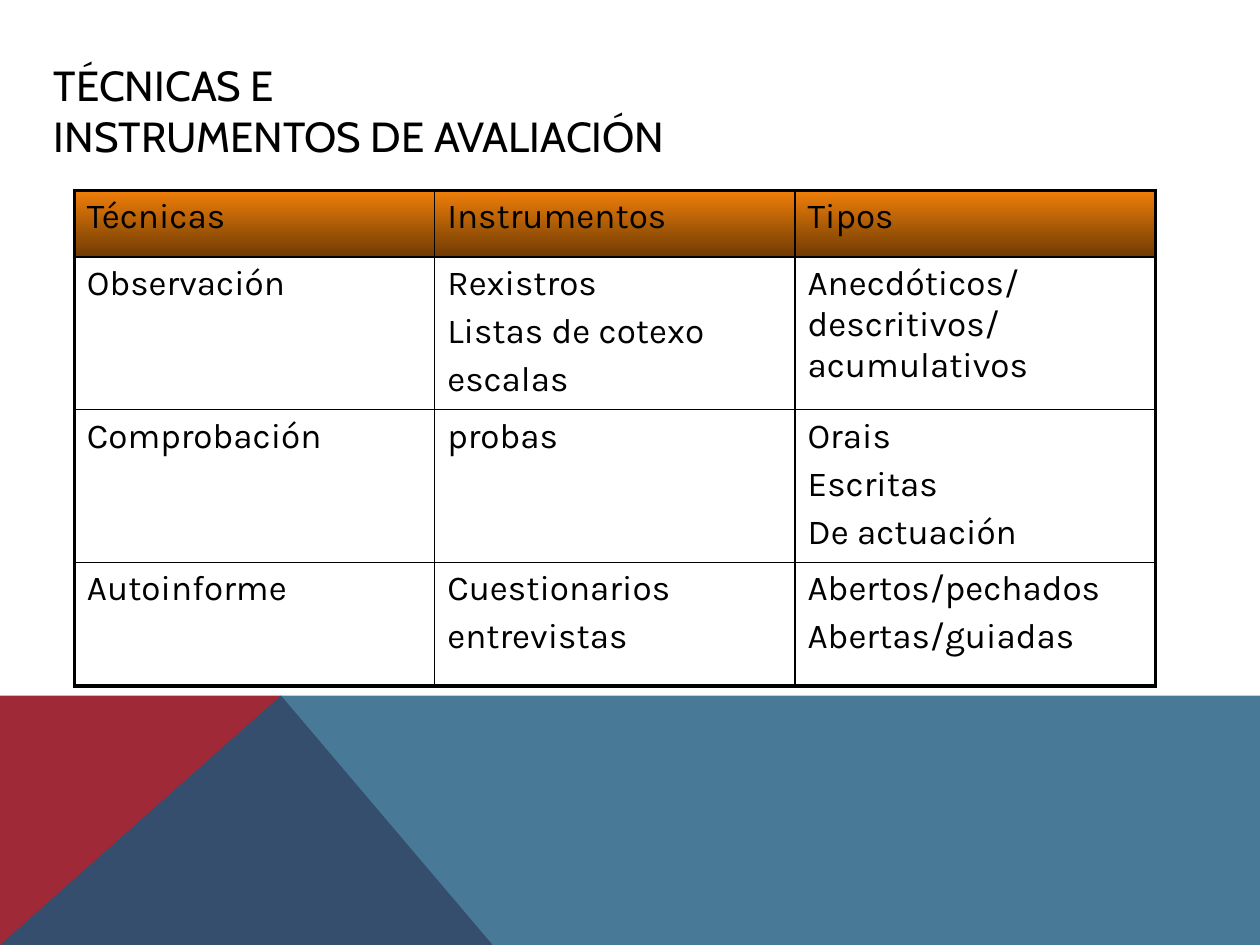
from lxml import etree
from pptx import Presentation
from pptx.dml.color import RGBColor
from pptx.enum.text import MSO_ANCHOR
from pptx.oxml.ns import qn
from pptx.util import Inches, Pt

MIDDLE = MSO_ANCHOR.MIDDLE
COLORS = {
    "ink": "000000",
    "red": "9F2936",
    "blue": "1B587C",
    "orange": "F07F09",
    "brown": "6F3B04",
}
TITLE = "TÉCNICAS E\vINSTRUMENTOS DE AVALIACIÓN"
ROWS = [
    (["Técnicas"], ["Instrumentos"], ["Tipos"]),
    (
        ["Observación"],
        ["Rexistros", "Listas de cotexo", "escalas"],
        ["Anecdóticos/descritivos/acumulativos"],
    ),
    (["Comprobación"], ["probas"], ["Orais", "Escritas", "De actuación"]),
    (
        ["Autoinforme"],
        ["Cuestionarios", "entrevistas"],
        ["Abertos/pechados", "Abertas/guiadas"],
    ),
]
ROW_HEIGHTS = [0.53, 1.19, 1.18, 0.98]
THIN, THICK = 1, 2.25


def color(name):
    """Return the named colour."""
    return RGBColor.from_string(COLORS[name])


def write(frame, lines, font, size, before=0):
    """Fill a text frame with one paragraph for each line."""
    for index, line in enumerate(lines):
        para = frame.paragraphs[0] if index == 0 else frame.add_paragraph()
        para.text = line
        para.space_before = Pt(before)
        para.font.name = font
        para.font.size = Pt(size)
        para.font.color.rgb = color("ink")


def add_polygon(page, points, fill, alpha=None):
    """Draw a closed outline through points in inches, with optional opacity."""
    corners = [(Inches(x), Inches(y)) for x, y in points]
    builder = page.shapes.build_freeform(*corners[0])
    builder.add_line_segments(corners[1:], close=True)
    shape = builder.convert_to_shape()
    shape.shadow.inherit = False
    shape.fill.solid()
    shape.fill.fore_color.rgb = color(fill)
    shape.line.fill.background()
    if alpha is not None:
        tone = shape.element.spPr.find(qn("a:solidFill"))[0]
        etree.SubElement(tone, qn("a:alpha"), val=str(alpha * 1000))


def add_footer(page, left, top, width, height):
    """Draw the red triangle and the translucent blue band over it."""
    right, bottom, peak = left + width, top + height, left + 2.23
    add_polygon(
        page, [(left, bottom), (left, top), (peak, top), (left + 3.91, bottom)], "red"
    )
    add_polygon(
        page,
        [(left, bottom), (peak, top), (right, top), (right, bottom)],
        "blue",
        alpha=80,
    )


def add_title(page, left, top, width, height):
    """Place the heading, centred vertically in its box."""
    box = page.shapes.add_textbox(
        Inches(left), Inches(top), Inches(width), Inches(height)
    )
    box.text_frame.word_wrap = True
    box.text_frame.vertical_anchor = MIDDLE
    write(box.text_frame, [TITLE], "Cabin", 24)


def set_borders(cell, widths):
    """Set the left, right, top and bottom borders of a cell in points."""
    properties = cell._tc.get_or_add_tcPr()
    for index, (side, width) in enumerate(zip("LRTB", widths)):
        line = etree.Element(qn(f"a:ln{side}"), w=str(Pt(width)))
        fill = etree.SubElement(line, qn("a:solidFill"))
        etree.SubElement(fill, qn("a:srgbClr"), val=COLORS["ink"])
        properties.insert(index, line)


def fill_header(cell):
    """Shade a cell from orange at the top to brown at the bottom."""
    cell.fill.gradient()
    cell.fill.gradient_angle = 270
    for stop, name in zip(cell.fill.gradient_stops, ("orange", "brown")):
        stop.color.rgb = color(name)


def add_techniques_table(page, left, top, width, height):
    """Place the table, with a thick frame and thin inner lines."""
    last_row, last_column = len(ROWS) - 1, len(ROWS[0]) - 1
    table = page.shapes.add_table(
        len(ROWS),
        len(ROWS[0]),
        Inches(left),
        Inches(top),
        Inches(width),
        Inches(height),
    ).table
    table.horz_banding = False
    table.first_row = False
    for row, row_height in zip(table.rows, ROW_HEIGHTS):
        row.height = Inches(row_height)
    for r, row in enumerate(ROWS):
        for c, lines in enumerate(row):
            cell = table.cell(r, c)
            write(cell.text_frame, lines, "Karla", 20, before=4)
            if r == 0:
                fill_header(cell)
            else:
                cell.fill.background()
            edges = (c == 0, c == last_column, r == 0, r == last_row)
            set_borders(cell, [THICK if edge else THIN for edge in edges])


def main():
    """Build the slide and save the deck."""
    deck = Presentation()
    deck.slide_width, deck.slide_height = Inches(10), Inches(7.5)
    page = deck.slides.add_slide(deck.slide_layouts[6])
    add_footer(page, 0, 5.52, 10, 1.98)
    add_title(page, 0.33, 0.25, 9.34, 1.25)
    add_techniques_table(page, 0.59, 1.51, 8.58, sum(ROW_HEIGHTS))
    deck.save("out.pptx")


if __name__ == "__main__":
    main()
